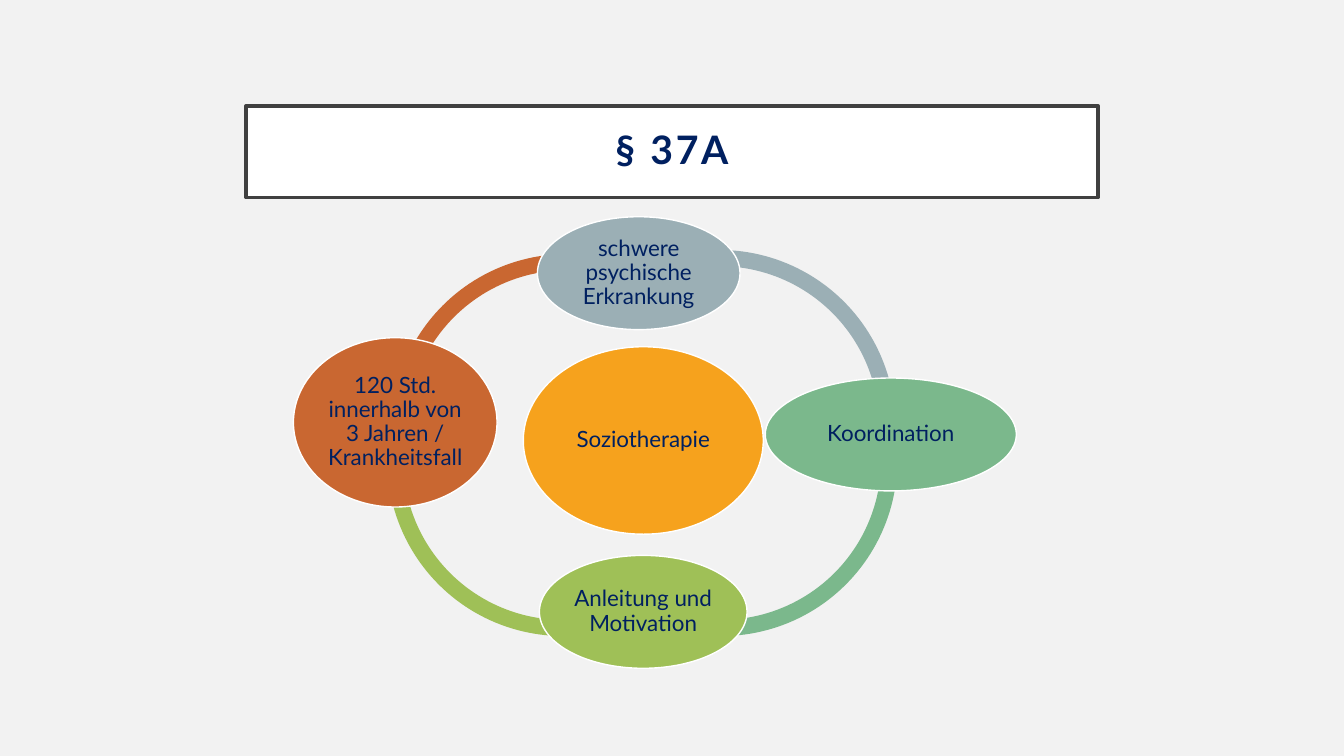
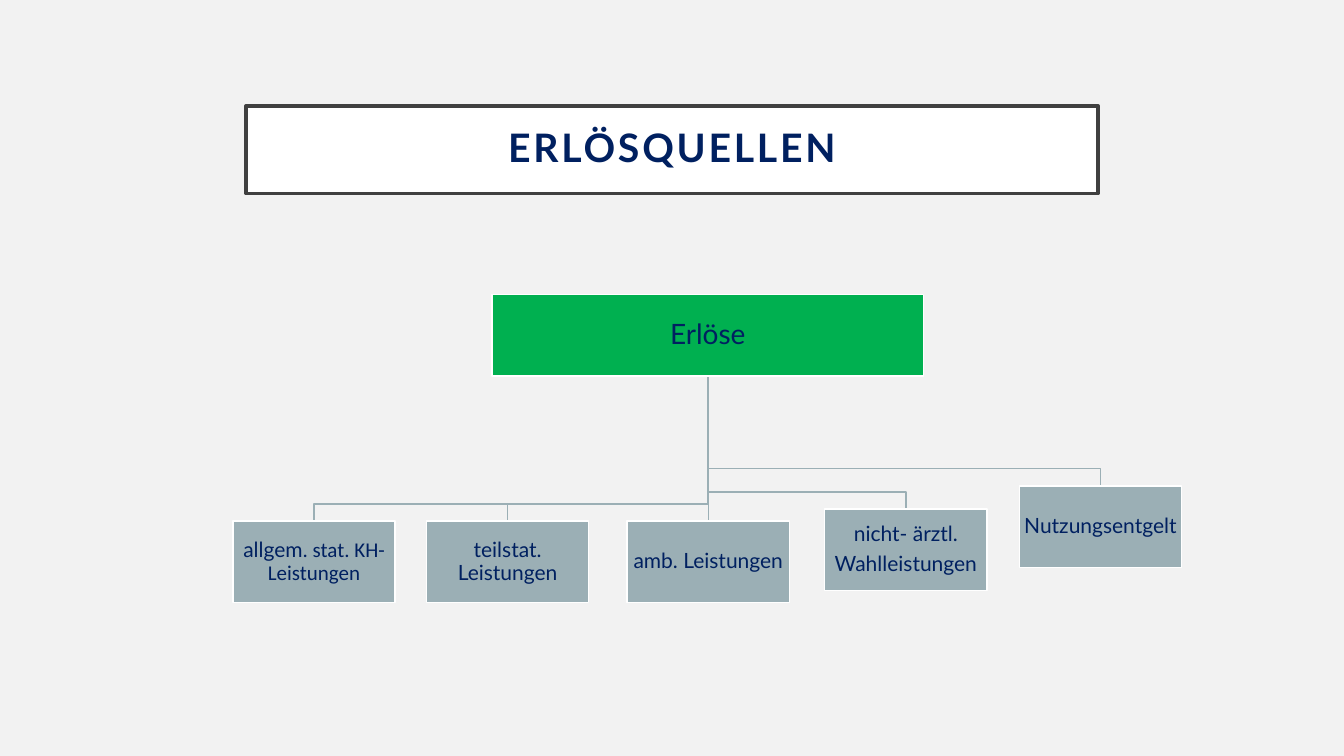
import pptx
import pptx.util
import pptx.dml.color
import pptx.enum.shapes
import pptx.enum.text
import pptx.oxml.ns

Inches, Pt = pptx.util.Inches, pptx.util.Pt
SHAPE = pptx.enum.shapes.MSO_SHAPE

COLORS = {
    "background": "F2F2F2", "white": "FFFFFF", "frame": "404040", "text": "002060",
    "slate": "9BAFB5", "mint": "7BB88C", "lime": "9FC057", "rust": "C96731",
    "amber": "F6A21D", "green": "00B050",
}
FONT = "Lato"

CARE_TITLE = ("§ 37A", 0.91)
RING_SIZE, RING_THICKNESS = 3.49, 0.046
RING_ARCS = [
    ("rust", 3.88, 2.52, 182.22, 294.96),
    ("lime", 3.84, 2.82, 62.15, 192.66),
    ("mint", 5.41, 2.82, 351.58, 117.18),
    ("slate", 5.39, 2.48, 242.03, 2.98),
]
CARE_TOPICS = [
    ("Soziotherapie", "amber", (5.19, 3.44, 2.38, 1.86)),
    ("schwere psychische Erkrankung", "slate", (5.33, 2.15, 2.01, 1.12)),
    ("Koordination", "mint", (7.59, 3.75, 2.49, 1.12)),
    ("Anleitung und Motivation", "lime", (5.35, 5.51, 2.06, 1.12)),
    ("120 Std. innerhalb von 3 Jahren / Krankheitsfall", "rust", (2.91, 3.35, 2.02, 1.68)),
]

REVENUE_TITLE = ("ERLÖSQUELLEN", 0.87)
REVENUE_ROOT = ("Erlöse", (4.88, 2.92, 4.28, 0.81))
SOURCE_WIDTH, SOURCE_HEIGHT, ELBOW_RISE = 1.61, 0.81, 0.17
REVENUE_SOURCES = [
    ([[("allgem", FONT), (". stat. KH-Leistungen", "Calibri")]], 2.31, 5.17),
    (["teilstat. Leistungen"], 4.23, 5.17),
    (["amb. Leistungen"], 6.22, 5.17),
    (["nicht- ärztl.", "Wahlleistungen"], 8.18, 5.05),
    (["Nutzungsentgelt"], 10.11, 4.82),
]


def color(name):
    return pptx.dml.color.RGBColor.from_string(COLORS[name])


def add_part(slide, kind, box, fill, line=None, line_width=1):
    part = slide.shapes.add_shape(kind, *map(Inches, box))
    part.shadow.inherit = False
    part.fill.solid()
    part.fill.fore_color.rgb = color(fill)
    if line:
        part.line.color.rgb = color(line)
        part.line.width = Pt(line_width)
    else:
        part.line.fill.background()
    return part


def write(part, paragraphs, size, inset, bold=False, space_after=0):
    frame = part.text_frame
    frame.word_wrap = True
    frame.vertical_anchor = pptx.enum.text.MSO_ANCHOR.MIDDLE
    frame.margin_left = frame.margin_right = Inches(inset)
    frame.margin_top = frame.margin_bottom = Inches(inset)
    for index, content in enumerate(paragraphs):
        paragraph = frame.add_paragraph() if index else frame.paragraphs[0]
        paragraph.alignment = pptx.enum.text.PP_ALIGN.CENTER
        paragraph.line_spacing = 0.9
        paragraph.space_after = Pt(space_after)
        paragraph.font.size = Pt(size)
        paragraph.font.bold = bold
        paragraph.font.color.rgb = color("text")
        if isinstance(content, str):
            paragraph.font.name = FONT
            paragraph.add_run().text = content
        else:
            for words, font in content:
                run = paragraph.add_run()
                run.text = words
                run.font.name = font


def add_titled_slide(deck, title, height):
    slide = deck.slides.add_slide(deck.slide_layouts[6])
    slide.background.fill.solid()
    slide.background.fill.fore_color.rgb = color("background")
    banner = add_part(slide, SHAPE.RECTANGLE, (2.44, 1.05, 8.45, height),
                      "white", "frame", 2.5)
    write(banner, [title], 28, 0.2, bold=True)
    for properties in banner.element.iter(pptx.oxml.ns.qn("a:defRPr")):
        properties.set("spc", "200")
    return slide


def add_label(slide, kind, box, fill, paragraphs, size, inset):
    part = add_part(slide, kind, box, fill, "white")
    write(part, paragraphs, size, inset, space_after=round(size * 0.35))


def add_branch(slide, start, end):
    (start_x, start_y), (end_x, end_y) = start, end
    elbow_y = end_y - ELBOW_RISE
    builder = slide.shapes.build_freeform(Inches(start_x), Inches(start_y))
    corners = [(start_x, elbow_y), (end_x, elbow_y), end]
    builder.add_line_segments([(Inches(x), Inches(y)) for x, y in corners], close=False)
    branch = builder.convert_to_shape()
    branch.shadow.inherit = False
    branch.fill.background()
    branch.line.color.rgb = color("slate")
    branch.line.width = Pt(1)


def build_care(deck):
    slide = add_titled_slide(deck, *CARE_TITLE)
    for fill, left, top, start, end in RING_ARCS:
        arc = add_part(slide, SHAPE.BLOCK_ARC, (left, top, RING_SIZE, RING_SIZE), fill)
        arc.adjustments[0] = start * 0.6
        arc.adjustments[1] = end * 0.6
        arc.adjustments[2] = RING_THICKNESS
    for topic, fill, box in CARE_TOPICS:
        add_label(slide, SHAPE.OVAL, box, fill, [topic], 16, 0.02)


def build_revenue(deck):
    slide = add_titled_slide(deck, *REVENUE_TITLE)
    root, root_box = REVENUE_ROOT
    left, top, width, height = root_box
    trunk = (left + width / 2, top + height)
    for _, source_left, source_top in reversed(REVENUE_SOURCES):
        add_branch(slide, trunk, (source_left + SOURCE_WIDTH / 2, source_top))
    add_label(slide, SHAPE.RECTANGLE, root_box, "green", [root], 20, 0.01)
    for paragraphs, source_left, source_top in REVENUE_SOURCES:
        box = (source_left, source_top, SOURCE_WIDTH, SOURCE_HEIGHT)
        add_label(slide, SHAPE.RECTANGLE, box, "slate", paragraphs, 15, 0.01)


def main():
    deck = pptx.Presentation()
    deck.slide_width, deck.slide_height = Inches(13.33), Inches(7.5)
    build_care(deck)
    build_revenue(deck)
    deck.save("out.pptx")


if __name__ == "__main__":
    main()
